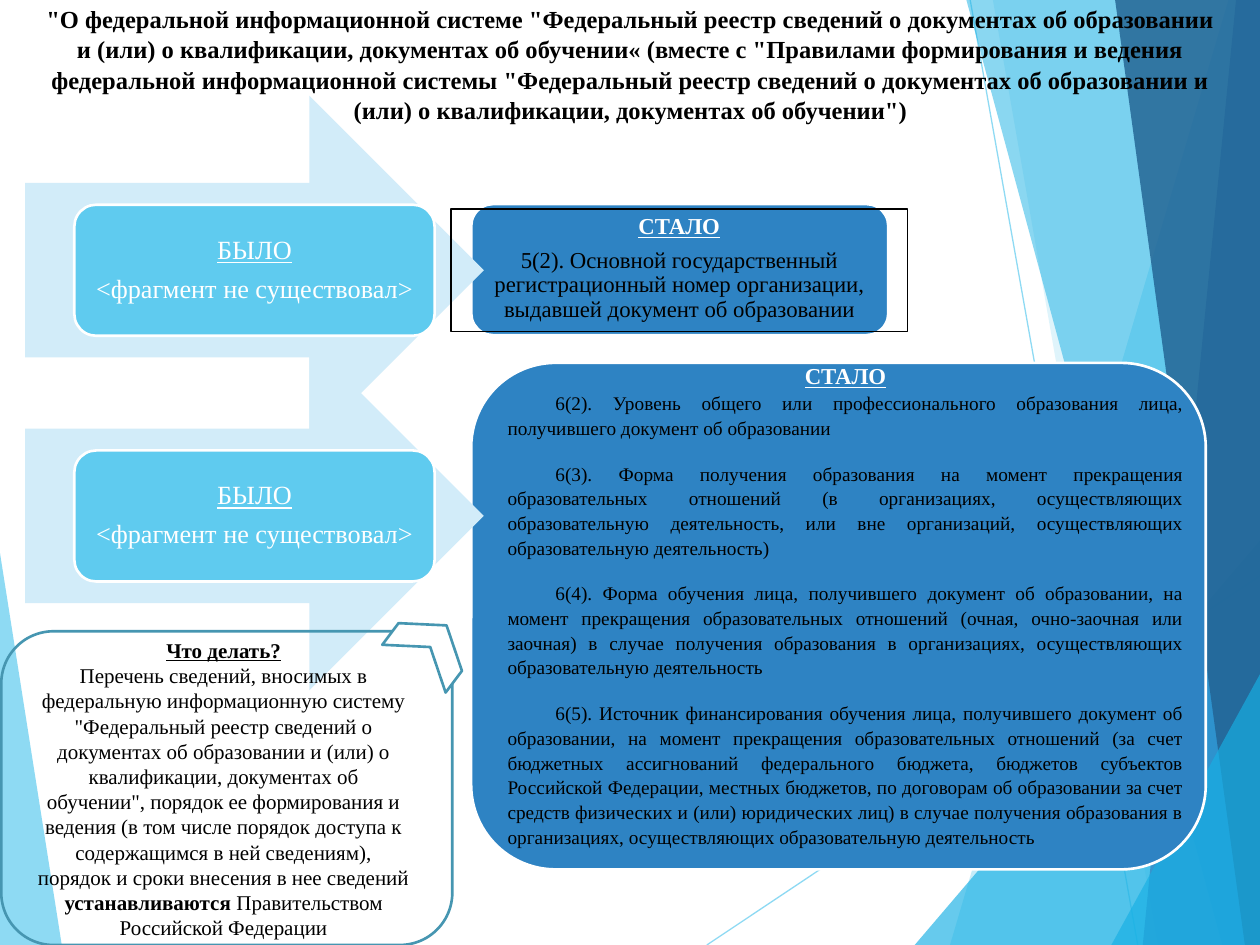
from lxml import etree
from pptx import Presentation
from pptx.dml.color import RGBColor
from pptx.enum.shapes import MSO_CONNECTOR, MSO_SHAPE
from pptx.enum.text import MSO_ANCHOR, PP_ALIGN
from pptx.oxml.ns import qn
from pptx.util import Inches, Pt

ROUND, RECT = MSO_SHAPE.ROUNDED_RECTANGLE, MSO_SHAPE.RECTANGLE
ARROW, CHEVRON = MSO_SHAPE.RIGHT_ARROW, MSO_SHAPE.CHEVRON
STRAIGHT = MSO_CONNECTOR.STRAIGHT
CENTER, JUSTIFY = PP_ALIGN.CENTER, PP_ALIGN.JUSTIFY
TOP, MIDDLE = MSO_ANCHOR.TOP, MSO_ANCHOR.MIDDLE

COLORS = {
    "white": "FFFFFF", "black": "000000", "sky": "5FCBEF", "cyan": "17B0E4",
    "blue": "2E83C3", "navy": "226292", "pale": "D2ECF9", "teal": "4696B1",
}
COLUMNS, ROWS = 100, 75


class SlideBuilder:
    font = "Times New Roman"

    def __init__(self, deck):
        self.slide = deck.slides.add_slide(deck.slide_layouts[6])
        self.shapes = self.slide.shapes
        self.column = deck.slide_width / COLUMNS
        self.row = deck.slide_height / ROWS

    def place(self, column, row):
        return round(column * self.column), round(row * self.row)

    def paint(self, fill, color, opacity=100):
        if color is None:
            fill.background()
            return
        fill.solid()
        fill.fore_color.rgb = RGBColor.from_string(COLORS[color])
        if opacity < 100:
            for tone in fill._xPr.iter(qn("a:srgbClr")):
                etree.SubElement(tone, qn("a:alpha")).set("val", str(opacity * 1000))

    def facet(self, points, color, opacity):
        start, *rest = [self.place(*point) for point in points]
        outline = self.shapes.build_freeform(*start, scale=1.0)
        outline.add_line_segments(rest, close=True)
        facet = outline.convert_to_shape()
        facet.shadow.inherit = False
        self.paint(facet.fill, color, opacity)
        facet.line.fill.background()

    def ray(self, start, end, color, opacity):
        ray = self.shapes.add_connector(STRAIGHT, *self.place(*start), *self.place(*end))
        ray.line.width = Pt(0.75)
        self.paint(ray.line.fill, color, opacity)
        etree.SubElement(ray._element.spPr, qn("a:effectLst"))

    def shape(self, kind, area, fill=None, line=None, width=1.5, rotation=0):
        shape = self.shapes.add_shape(kind, *self.place(*area[:2]), *self.place(*area[2:]))
        shape.shadow.inherit = False
        shape.rotation = rotation
        self.paint(shape.fill, fill)
        self.paint(shape.line.fill, line)
        if line:
            shape.line.width = Pt(width)
        return shape

    def text(self, area, paragraphs, anchor=TOP, inset=None):
        box = self.shapes.add_textbox(*self.place(*area[:2]), *self.place(*area[2:]))
        self.fill_text(box.text_frame, paragraphs, anchor, inset)

    def fill_text(self, frame, paragraphs, anchor=TOP, inset=None):
        frame.word_wrap = True
        frame.vertical_anchor = anchor
        if inset is not None:
            frame.margin_left = frame.margin_right = Inches(inset)
            frame.margin_top = frame.margin_bottom = Inches(inset)
        for index, settings in enumerate(paragraphs):
            paragraph = frame.add_paragraph() if index else frame.paragraphs[0]
            self.paragraph(paragraph, **settings)

    def paragraph(self, paragraph, runs, size, color="black", bold=False, underline=False,
                  align=CENTER, spacing=1.0, before=0, after=0, indent=0):
        paragraph.alignment = align
        paragraph.line_spacing = spacing
        paragraph.space_before, paragraph.space_after = Pt(before), Pt(after)
        if indent:
            paragraph._p.get_or_add_pPr().set("indent", str(Inches(indent)))
        font = paragraph.font
        font.name, font.size = self.font, Pt(size)
        font.bold, font.underline = bold, underline
        font.color.rgb = RGBColor.from_string(COLORS[color])
        for words, strong in [(runs, False)] if isinstance(runs, str) else runs:
            run = paragraph.add_run()
            run.text = words
            if strong:
                run.font.bold = True

    def before_step(self, row):
        self.shape(ARROW, (2, row, 36.4, 27.7), "pale")
        self.shape(ROUND, (5.9, row + 8.65, 28.6, 10.4), "sky", "white")
        style = dict(size=15, color="white", spacing=0.9, after=6)
        self.text((6.4, row + 9.15, 27.6, 9.4), [
            dict(runs="БЫЛО", underline=True, **style),
            dict(runs="<фрагмент не существовал>", **style),
        ], MIDDLE, 0.06)


TITLE = (
    '"О федеральной информационной системе "Федеральный реестр сведений о документах '
    'об образовании и (или) о квалификации, документах об обучении« (вместе с "Правилами '
    'формирования и ведения федеральной информационной системы "Федеральный реестр сведений '
    'о документах об образовании и (или) о квалификации, документах об обучении")'
)
CLAUSES = [
    "6(2). Уровень общего или профессионального образования лица, получившего документ "
    "об образовании",
    "6(3). Форма получения образования на момент прекращения образовательных отношений "
    "(в организациях, осуществляющих образовательную деятельность, или вне организаций, "
    "осуществляющих образовательную деятельность)",
    "6(4). Форма обучения лица, получившего документ об образовании, на момент прекращения "
    "образовательных отношений (очная, очно-заочная или заочная) в случае получения "
    "образования в организациях, осуществляющих образовательную деятельность",
    "6(5). Источник финансирования обучения лица, получившего документ об образовании, "
    "на момент прекращения образовательных отношений (за счет бюджетных ассигнований "
    "федерального бюджета, бюджетов субъектов Российской Федерации, местных бюджетов, "
    "по договорам об образовании за счет средств физических и (или) юридических лиц) "
    "в случае получения образования в организациях, осуществляющих образовательную "
    "деятельность",
]
ACTION = [
    ("Перечень сведений, вносимых в федеральную информационную систему "
     '"Федеральный реестр сведений о документах об образовании и (или) о квалификации, '
     'документах об обучении", порядок ее формирования и ведения (в том числе порядок '
     "доступа к содержащимся в ней сведениям), порядок и сроки внесения в нее сведений ", False),
    ("устанавливаются ", True),
    ("Правительством Российской Федерации", False),
]
FACETS = [
    ([(97.5, 0), (75.4, 75), (100, 75), (100, 0)], "sky", 36),
    ([(78.8, 0), (91.9, 75), (100, 75), (100, 0)], "sky", 20),
    ([(72.6, 75), (100, 42.9), (100, 75)], "cyan", 66),
    ([(76.7, 0), (97, 75), (100, 75), (100, 0)], "cyan", 50),
    ([(98.1, 0), (90.7, 75), (100, 75), (100, 0)], "blue", 70),
    ([(88.5, 0), (98.8, 75), (100, 75), (100, 0)], "navy", 82),
    ([(88.2, 75), (100, 53.5), (100, 75)], "cyan", 66),
]


def main():
    deck = Presentation()
    deck.slide_width, deck.slide_height = Inches(10), Inches(7.5)
    page = SlideBuilder(deck)

    page.facet([(0, 43.9), (4.9, 75), (0, 75)], "sky", 70)
    page.ray((56.1, 75), (100, 45.7), "sky", 70)
    page.ray((77, 0), (90.3, 75), "sky", 70)
    for points, color, opacity in FACETS:
        page.facet(points, color, opacity)

    page.shape(ROUND, (37.4, 16.2, 33.1, 10.4), "blue", "white")
    page.text((2, -0.3, 96.1, 10.3), [dict(runs=TITLE, size=14, bold=True, spacing=1.04)])
    page.before_step(7.6)

    heading = dict(runs="СТАЛО", size=13, color="white", bold=True, underline=True, spacing=0.9)
    number = page.shape(RECT, (35.8, 16.6, 36.2, 9.7), line="black", width=0.75)
    page.fill_text(number.text_frame, [
        dict(heading, after=5),
        dict(runs="5(2). Основной государственный регистрационный номер организации, "
                  "выдавшей документ об образовании", size=13, spacing=0.9, after=5),
    ])

    page.shape(ROUND, (37.4, 28.8, 58.3, 40.2), "blue", "white")
    page.text((39.3, 28.5, 55.6, 39.7), [heading] + [
        dict(runs=clause, size=11, align=JUSTIFY, spacing=1.07, indent=0.38,
             before=12 if index else 0)
        for index, clause in enumerate(CLAUSES)
    ])
    page.before_step(27.1)

    page.shape(ROUND, (0.1, 50.1, 35.8, 24.9), line="teal")
    page.text((2, 50.1, 31.5, 25.2), [
        dict(runs="Что делать?", size=12, bold=True, underline=True),
        dict(runs=ACTION, size=12),
    ])
    page.shape(CHEVRON, (32, 48.2, 4.3, 6.3), "white", "teal", rotation=307)

    deck.save("out.pptx")


if __name__ == "__main__":
    main()
